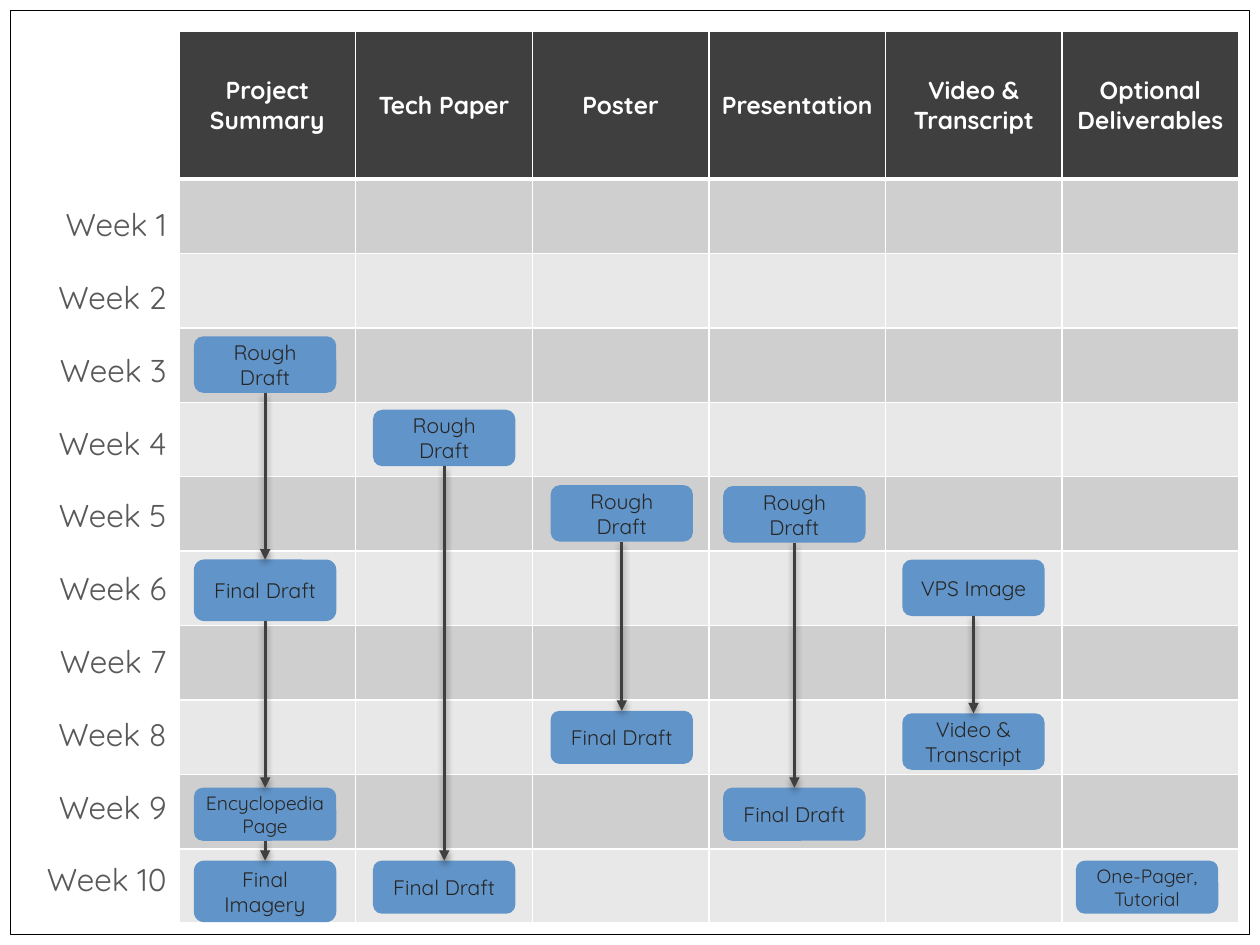
"""Build a slide that charts the weekly deadlines of each project deliverable."""
from itertools import pairwise

from lxml.etree import SubElement
from pptx import Presentation
from pptx.dml.color import RGBColor
from pptx.enum.shapes import MSO_CONNECTOR, MSO_SHAPE
from pptx.enum.text import MSO_ANCHOR, MSO_AUTO_SIZE, PP_ALIGN
from pptx.oxml import parse_xml
from pptx.oxml.ns import nsdecls, qn
from pptx.util import Cm, Pt

WHITE = RGBColor(0xFF, 0xFF, 0xFF)
BLACK = RGBColor(0x00, 0x00, 0x00)
CHARCOAL = RGBColor(0x3F, 0x3F, 0x3F)
INK = RGBColor(0x26, 0x26, 0x26)
GRAY = RGBColor(0x59, 0x59, 0x59)
DARK_BAND = RGBColor(0xCF, 0xCF, 0xCF)
LIGHT_BAND = RGBColor(0xE8, 0xE8, 0xE8)
BLUE = RGBColor(0x61, 0x94, 0xC8)

FONT = "Quicksand"
WEEKS = 10
BOX_WIDTH = 2.87
HEADERS = ["Project Summary", "Tech Paper", "Poster", "Presentation",
           "Video & Transcript", "Optional Deliverables"]

# Each track: left edge, then (text, top, height, format) for every box.
TRACKS = [
    (3.91, [("Rough Draft", 6.78, 1.14, {}),
            ("Final Draft", 11.28, 1.24, {}),
            ("Encyclopedia Page", 15.88, 1.07, {"size": 11, "side_margin": 0}),
            ("Final Imagery", 17.35, 1.24, {})]),
    (7.52, [("Rough Draft", 8.26, 1.14, {}),
            ("Final Draft", 17.35, 1.07, {})]),
    (11.1, [("Rough Draft", 9.78, 1.14, {}),
            ("Final Draft", 14.33, 1.07, {})]),
    (14.58, [("Rough Draft", 9.8, 1.14, {}),
             ("Final Draft", 15.88, 1.07, {})]),
    (18.19, [("VPS Image", 11.28, 1.14, {}),
             ("Video & Transcript", 14.38, 1.14, {})]),
    (21.69, [("One-Pager, Tutorial", 17.35, 1.07, {"size": 11})]),
]


def write_text(paragraph, text, size=12, color=INK, bold=False,
               align=PP_ALIGN.CENTER, space_after=0):
    paragraph.alignment = align
    paragraph.space_after = Pt(space_after)
    run = paragraph.add_run()
    run.text = text
    run.font.name = FONT
    run.font.size = Pt(size)
    run.font.bold = bold
    run.font.color.rgb = color


class ScheduleSlide:
    def __init__(self, slide, font_size=12, line_width=1.57):
        self.shapes = slide.shapes
        self.font_size = font_size
        self.line_width = line_width

    def frame(self, left, top, width, height):
        shape = self.shapes.add_shape(
            MSO_SHAPE.RECTANGLE, Cm(left), Cm(top), Cm(width), Cm(height))
        shape.shadow.inherit = False
        shape.fill.solid()
        shape.fill.fore_color.rgb = WHITE
        shape.line.color.rgb = BLACK
        shape.line.width = Pt(0.75)

    def cell(self, cell, fill, bottom_width=1):
        properties = cell._tc.get_or_add_tcPr()
        for side in ("lnL", "lnR", "lnT", "lnB"):
            width = bottom_width if side == "lnB" else 1
            border = SubElement(properties, qn(f"a:{side}"), w=str(Pt(width)))
            border_fill = SubElement(border, qn("a:solidFill"))
            SubElement(border_fill, qn("a:srgbClr"), val=str(WHITE))
        cell.fill.solid()
        cell.fill.fore_color.rgb = fill

    def grid(self, left, top, column_width, header_height, row_height):
        table = self.shapes.add_table(
            WEEKS + 1, len(HEADERS), Cm(left), Cm(top),
            Cm(column_width * len(HEADERS)),
            Cm(header_height + row_height * WEEKS)).table
        table.horz_banding = False
        for column in table.columns:
            column.width = Cm(column_width)
        for index, row in enumerate(table.rows):
            row.height = Cm(row_height if index else header_height)
            for cell in row.cells:
                if index:
                    self.cell(cell, DARK_BAND if index % 2 else LIGHT_BAND)
                else:
                    self.cell(cell, CHARCOAL, bottom_width=3)
        for cell, header in zip(table.rows[0].cells, HEADERS):
            cell.vertical_anchor = MSO_ANCHOR.MIDDLE
            write_text(cell.text_frame.paragraphs[0], header,
                       size=14, color=WHITE, bold=True)

    def week_labels(self, left, top, width, height):
        text_frame = self.shapes.add_textbox(
            Cm(left), Cm(top), Cm(width), Cm(height)).text_frame
        text_frame.word_wrap = False
        text_frame.auto_size = MSO_AUTO_SIZE.SHAPE_TO_FIT_TEXT
        for week in range(1, WEEKS + 1):
            paragraph = (text_frame.paragraphs[0] if week == 1
                         else text_frame.add_paragraph())
            write_text(paragraph, f"Week {week}", size=18, color=GRAY,
                       align=PP_ALIGN.RIGHT, space_after=20)

    def box(self, text, left, top, height, size=None, side_margin=0.25):
        shape = self.shapes.add_shape(
            MSO_SHAPE.ROUNDED_RECTANGLE, Cm(left), Cm(top),
            Cm(BOX_WIDTH), Cm(height))
        shape.shadow.inherit = False
        shape.fill.solid()
        shape.fill.fore_color.rgb = BLUE
        shape.line.fill.background()
        text_frame = shape.text_frame
        text_frame.word_wrap = True
        text_frame.vertical_anchor = MSO_ANCHOR.MIDDLE
        text_frame.margin_left = text_frame.margin_right = Cm(side_margin)
        write_text(text_frame.paragraphs[0], text, size=size or self.font_size)

    def arrow(self, center, start, end):
        connector = self.shapes.add_connector(
            MSO_CONNECTOR.STRAIGHT, Cm(center), Cm(start), Cm(center), Cm(end))
        connector.line.color.rgb = CHARCOAL
        connector.line.width = Pt(self.line_width)
        SubElement(connector.line._get_or_add_ln(), qn("a:tailEnd"),
                   type="triangle")
        connector._element.spPr.append(parse_xml(
            f'<a:effectLst {nsdecls("a")}>'
            f'<a:outerShdw blurRad="{Pt(4)}" dist="{Pt(2)}" dir="5400000">'
            f'<a:srgbClr val="{BLACK}"><a:alpha val="45000"/></a:srgbClr>'
            '</a:outerShdw></a:effectLst>'))

    def track(self, left, boxes):
        for text, top, height, style in boxes:
            self.box(text, left, top, height, **style)
        for (_, top, height, _), (_, next_top, _, _) in pairwise(boxes):
            self.arrow(left + BOX_WIDTH / 2, top + height, next_top)


def main():
    presentation = Presentation()
    presentation.slide_width = Cm(25.4)
    presentation.slide_height = Cm(19.05)
    schedule = ScheduleSlide(
        presentation.slides.add_slide(presentation.slide_layouts[6]))
    schedule.frame(0.21, 0.21, 24.98, 18.63)
    schedule.grid(3.61, 0.64, 3.56, 2.97, 1.5)
    schedule.week_labels(0.43, 4.01, 3.18, 14.35)
    for left, boxes in TRACKS:
        schedule.track(left, boxes)
    presentation.save("out.pptx")


if __name__ == "__main__":
    main()
